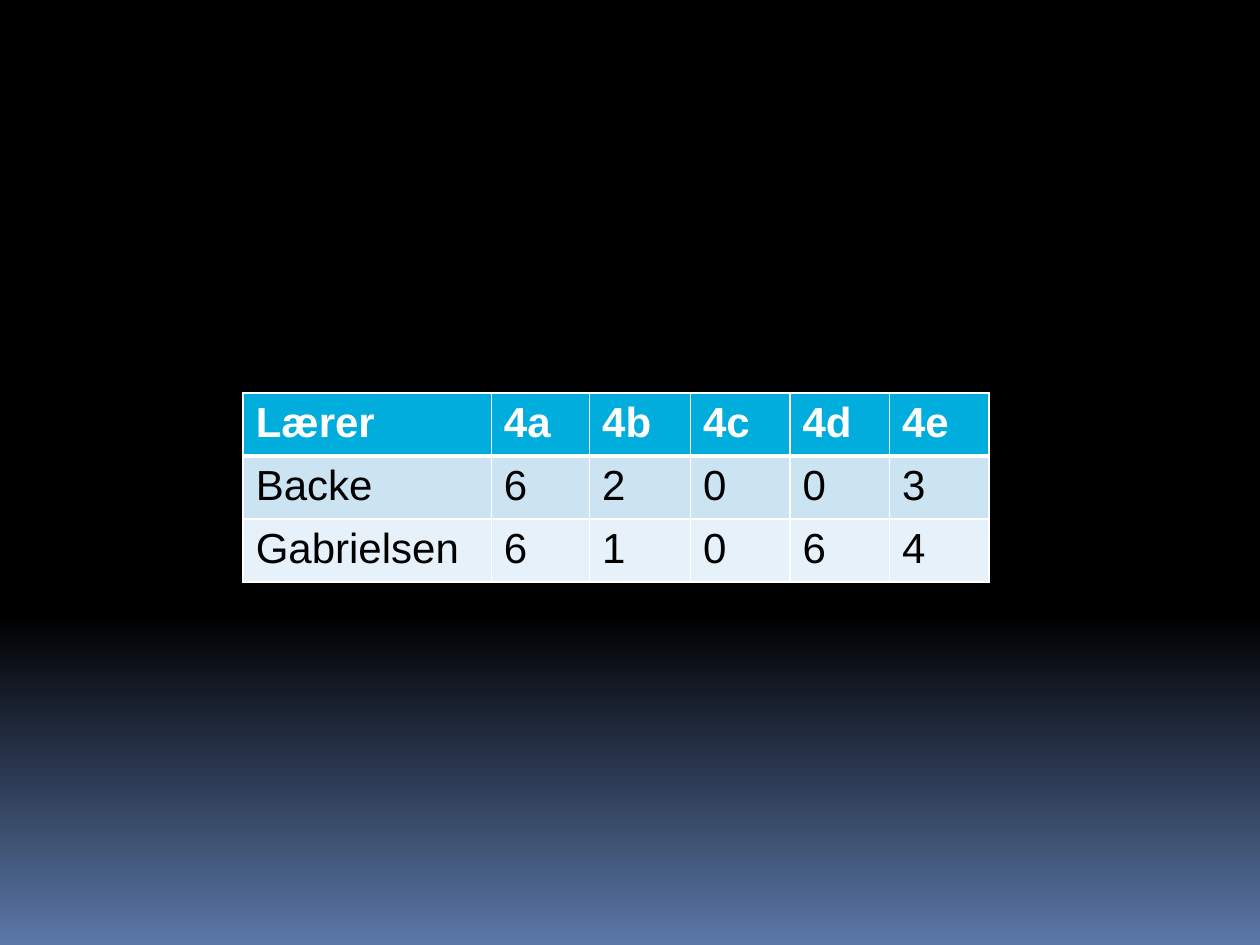
"""Build a slide with a table of counts per teacher and class."""
from typing import NamedTuple

from lxml import etree
from pptx import Presentation
from pptx import util as u
from pptx.dml.color import RGBColor
from pptx.oxml.ns import qn
from pptx.table import _Cell

COLORS = {
    "black": "000000",
    "horizon": "5B77A8",
    "white": "FFFFFF",
    "header": "00ADDC",
    "band_dark": "CCE3F2",
    "band_light": "E7F1F9",
}


class TableRow(NamedTuple):
    values: tuple[str, ...]
    fill: str
    ink: str = "black"
    bold: bool = False
    top: float = 1
    bottom: float = 1


ROWS = (
    TableRow(("Lærer", "4a", "4b", "4c", "4d", "4e"), "header", "white", True, bottom=3),
    TableRow(("Backe", "6", "2", "0", "0", "3"), "band_dark", top=3),
    TableRow(("Gabrielsen", "6", "1", "0", "6", "4"), "band_light"),
)
COLUMN_WIDTHS = (1.97, 0.78, 0.8, 0.79, 0.79, 0.79)
ROW_HEIGHT = 0.5


def rgb(name: str) -> RGBColor:
    return RGBColor.from_string(COLORS[name])


def draw_border(cell: _Cell, side: str, points: float) -> None:
    properties = cell._tc.get_or_add_tcPr()
    line = etree.SubElement(properties, qn(f"a:ln{side}"), w=str(u.Pt(points)))
    solid = etree.SubElement(line, qn("a:solidFill"))
    etree.SubElement(solid, qn("a:srgbClr"), val=COLORS["white"])


def fill_cell(cell: _Cell, value: str, row: TableRow) -> None:
    for side, points in (("L", 1), ("R", 1), ("T", row.top), ("B", row.bottom)):
        draw_border(cell, side, points)
    cell.fill.solid()
    cell.fill.fore_color.rgb = rgb(row.fill)
    cell.text_frame.text = value
    font = cell.text_frame.paragraphs[0].runs[0].font
    font.name = "Arial"
    font.size = u.Pt(24)
    font.bold = row.bold
    font.color.rgb = rgb(row.ink)


def main() -> None:
    presentation = Presentation()
    presentation.slide_width = u.Inches(10)
    presentation.slide_height = u.Inches(7.5)
    slide = presentation.slides.add_slide(presentation.slide_layouts[6])

    sky = slide.background.fill
    sky.gradient()
    sky.gradient_angle = 270
    for stop, (position, color) in zip(sky.gradient_stops, ((0.65, "black"), (1, "horizon"))):
        stop.position = position
        stop.color.rgb = rgb(color)

    teachers = slide.shapes.add_table(
        len(ROWS), len(COLUMN_WIDTHS), u.Inches(1.93), u.Inches(3.12),
        u.Inches(sum(COLUMN_WIDTHS)), u.Inches(ROW_HEIGHT * len(ROWS)),
    ).table
    for column, width in zip(teachers.columns, COLUMN_WIDTHS):
        column.width = u.Inches(width)
    for table_row, row in zip(teachers.rows, ROWS):
        for cell, value in zip(table_row.cells, row.values):
            fill_cell(cell, value, row)

    presentation.save("out.pptx")


if __name__ == "__main__":
    main()
